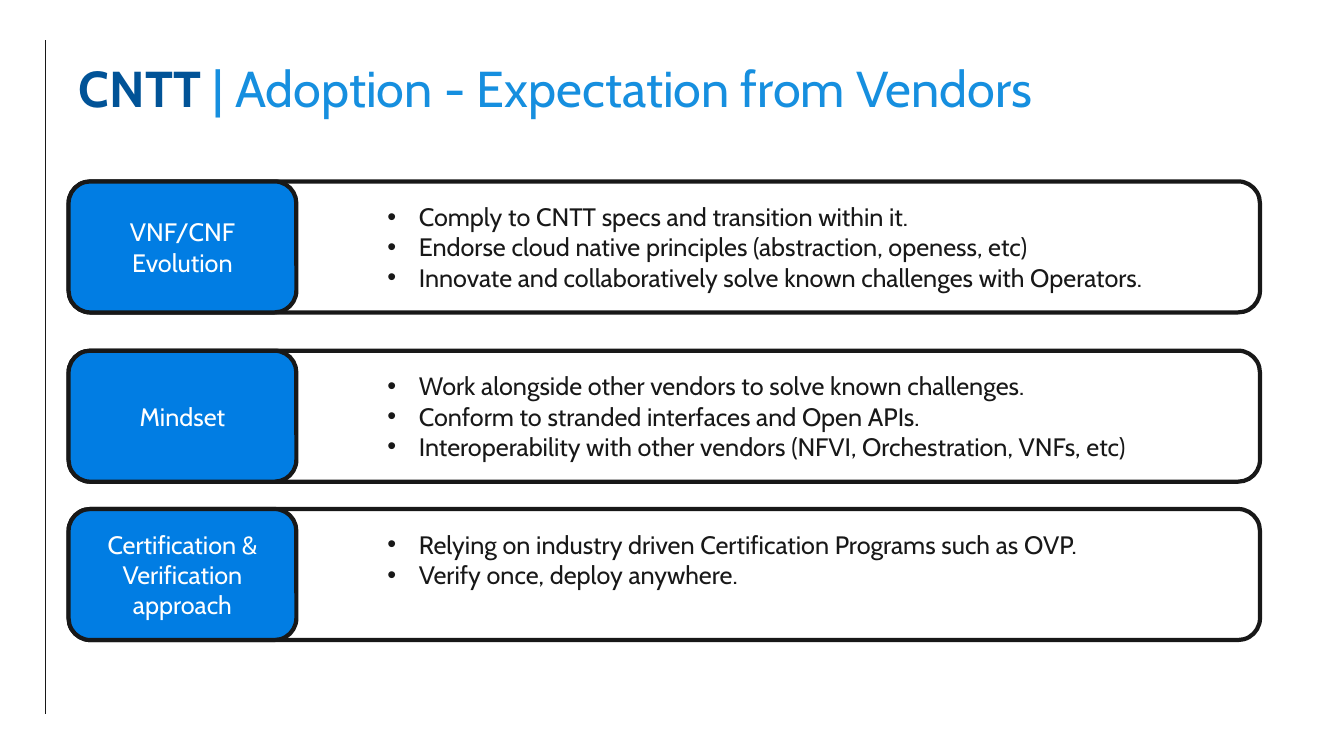
import pptx
import pptx.util
import pptx.dml.color
import pptx.enum.shapes
import pptx.enum.text
import pptx.oxml.ns
import lxml.etree

Pt = pptx.util.Pt
Color = pptx.dml.color.RGBColor
Anchor = pptx.enum.text.MSO_ANCHOR
Align = pptx.enum.text.PP_ALIGN
Kind = pptx.enum.shapes.MSO_SHAPE
tag = pptx.oxml.ns.qn

WHITE = Color(0xFF, 0xFF, 0xFF)
INK = Color(0x18, 0x18, 0x18)
NAVY = Color(0x01, 0x53, 0x97)
SKY = Color(0x16, 0x8F, 0xDF)
BLUE = Color(0x01, 0x7D, 0xE3)
FONT = "Cabin"

LEFT = 49
ROWS = [
    (129.6, "VNF/CNF Evolution", [
        "Comply to CNTT specs and transition within it.",
        "Endorse cloud native principles (abstraction, openess, etc)",
        "Innovate and collaboratively solve known challenges with Operators.",
    ]),
    (250.5, "Mindset", [
        "Work alongside other vendors to solve known challenges.",
        "Conform to stranded interfaces and Open APIs.",
        "Interoperability with other vendors (NFVI, Orchestration, VNFs, etc)",
    ]),
    (363.6, "Certification & Verification approach", [
        "Relying on industry driven Certification Programs such as OVP.",
        "Verify once, deploy anywhere.",
    ]),
]


def write(para, text, size=18, color=INK, bold=False, align=Align.LEFT):
    """Add one formatted run to a paragraph."""
    para.alignment = align
    run = para.add_run()
    run.text = text
    font = run.font
    font.name, font.size, font.bold = FONT, Pt(size), bold
    font.color.rgb = color


def dot(para, indent, hang):
    """Give a paragraph a hanging bullet."""
    props = para._p.get_or_add_pPr()
    props.set("marL", str(Pt(indent)))
    props.set("indent", str(-Pt(hang)))
    face = lxml.etree.SubElement(props, tag("a:buFont"))
    face.set("typeface", "Arial")
    mark = lxml.etree.SubElement(props, tag("a:buChar"))
    mark.set("char", "•")


def panel(group, left, top, width, height, fill):
    """Draw an outlined round box."""
    shape = group.shapes.add_shape(
        Kind.ROUNDED_RECTANGLE, Pt(left), Pt(top), Pt(width), Pt(height))
    shape.shadow.inherit = False
    shape.fill.solid()
    shape.fill.fore_color.rgb = fill
    shape.line.color.rgb = INK
    shape.line.width = Pt(3)
    shape.text_frame.word_wrap = True
    return shape.text_frame


def rule(slide, left, top, height):
    """Draw the thin margin line."""
    line = slide.shapes.add_connector(
        pptx.enum.shapes.MSO_CONNECTOR.STRAIGHT,
        Pt(left), Pt(top), Pt(left), Pt(top + height))
    line.line.color.rgb = INK
    line.line.width = Pt(0.5)
    lxml.etree.SubElement(line._element.spPr, tag("a:effectLst"))


def head(slide, left, top, width, height):
    """Place the two-tone title."""
    title = slide.shapes.title
    title.left, title.top = Pt(left), Pt(top)
    title.width, title.height = Pt(width), Pt(height)
    frame = title.text_frame
    frame.vertical_anchor = Anchor.MIDDLE
    frame.word_wrap = True
    para = frame.paragraphs[0]
    para.line_spacing = 0.9
    write(para, "CNTT", size=36, color=NAVY, bold=True)
    write(para, " | Adoption - Expectation from Vendors", size=36, color=SKY)


def card(slide, left, top, width, height, label, items):
    """Place a labelled card with its bullet list."""
    group = slide.shapes.add_group_shape()

    # List panel
    frame = panel(group, left, top, width, height, WHITE)
    frame.vertical_anchor = Anchor.TOP
    frame.margin_top = Pt(9.7)
    for i, item in enumerate(items):
        para = frame.paragraphs[0] if i == 0 else frame.add_paragraph()
        dot(para, 238.5, 22.5)
        write(para, item)

    # Label tab
    frame = panel(group, left, top, 162.7, height, BLUE)
    frame.vertical_anchor = Anchor.MIDDLE
    write(frame.paragraphs[0], label, color=WHITE, align=Align.CENTER)


def main():
    deck = pptx.Presentation()
    deck.slide_width, deck.slide_height = Pt(960), Pt(540)
    slide = deck.slides.add_slide(deck.slide_layouts[5])
    rule(slide, 32.4, 28.8, 481)
    head(slide, LEFT, 28.8, 861, 73.4)
    for top, label, items in ROWS:
        card(slide, LEFT, top, 851, 93.6, label, items)
    deck.save("out.pptx")


if __name__ == "__main__":
    main()
